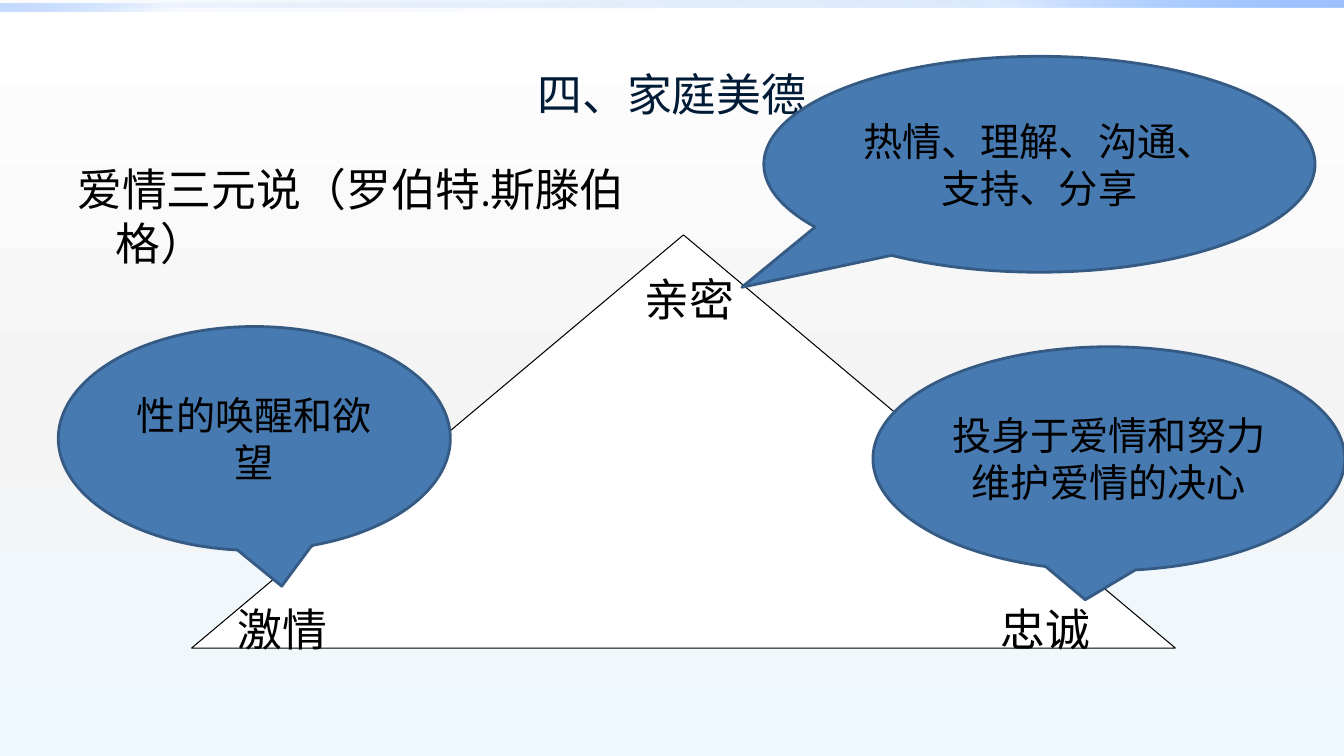
from dataclasses import dataclass

from lxml import etree
from pptx import Presentation
from pptx.dml.color import RGBColor
from pptx.enum.shapes import MSO_SHAPE
from pptx.enum.text import MSO_ANCHOR, MSO_AUTO_SIZE, PP_ALIGN
from pptx.oxml.ns import qn
from pptx.util import Cm, Pt

RECT = MSO_SHAPE.RECTANGLE
TRIANGLE = MSO_SHAPE.ISOSCELES_TRIANGLE
CALLOUT = MSO_SHAPE.OVAL_CALLOUT
TOP, MIDDLE = MSO_ANCHOR.TOP, MSO_ANCHOR.MIDDLE
LEFT, CENTER = PP_ALIGN.LEFT, PP_ALIGN.CENTER
GROW = MSO_AUTO_SIZE.SHAPE_TO_FIT_TEXT

BLACK = RGBColor(0x00, 0x00, 0x00)
WHITE = RGBColor(0xFF, 0xFF, 0xFF)
NAVY = RGBColor(0x00, 0x1B, 0x36)
CALLOUT_FILL = RGBColor(0x47, 0x7A, 0xB1)
CALLOUT_LINE = RGBColor(0x35, 0x5A, 0x83)
GREY = RGBColor(0xF4, 0xF4, 0xF4)
ICE = RGBColor(0xEE, 0xF9, 0xFF)
DEEP_BLUE = RGBColor(0x00, 0x58, 0xB7)
MID_BLUE = RGBColor(0x4F, 0x95, 0xFF)
PALE_BLUE = RGBColor(0x9E, 0xC2, 0xFF)

Box = tuple[float, float, float, float]


@dataclass
class Stop:
    position: int
    color: RGBColor
    opacity: int = 100


@dataclass
class Bar:
    box: Box
    angle: int
    stops: list[Stop]


@dataclass
class Text:
    text: str
    box: Box
    font: str = "Times New Roman"
    color: RGBColor = BLACK
    align: PP_ALIGN = LEFT
    anchor: MSO_ANCHOR = TOP
    hanging: float = 0
    grow: bool = False


@dataclass
class Callout:
    text: str
    box: Box
    tip: tuple[float, float]


BACKGROUND = [Stop(0, WHITE), Stop(55, GREY), Stop(100, ICE)]
BARS = [
    Bar((0, 0, 33.87, 0.2), 315,
        [Stop(0, DEEP_BLUE, 0), Stop(75, MID_BLUE, 20), Stop(100, PALE_BLUE)]),
    Bar((0, 0.1, 16.93, 0.2), 135,
        [Stop(0, DEEP_BLUE, 0), Stop(75, MID_BLUE, 5), Stop(100, PALE_BLUE, 60)]),
]
HEADINGS = [
    Text("四、家庭美德", (1.7, 0.76, 30.48, 3.18), "Arial", NAVY, CENTER, MIDDLE),
    Text("爱情三元说（罗伯特.斯滕伯格）", (1.7, 3.96, 14.66, 2.95), "Cambria",
         hanging=0.97),
]
TRIANGLE_BOX = (4.83, 5.92, 24.79, 10.41)
CORNERS = [
    Text("亲密", (16, 6.73, 3.53, 1.63), grow=True),
    Text("忠诚", (24.97, 15.04, 4.67, 1.63), grow=True),
    Text("激情", (5.74, 15.04, 5.87, 1.63), grow=True),
]
CALLOUTS = [
    Callout("热情、理解、沟通、支持、分享", (19.25, 1.42, 13.89, 5.44), (-0.54, 0.57)),
    Callout("性的唤醒和欲望", (1.47, 8.23, 9.88, 5.64), (0.07, 0.66)),
    Callout("投身于爱情和努力维护爱情的决心", (22, 8.74, 11.89, 5.64), (-0.05, 0.63)),
]


def set_gradient(fill, element, angle: int, stops: list[Stop]) -> None:
    fill.gradient()
    grad = next(element.iter(qn("a:gradFill")))
    for child in list(grad):
        grad.remove(child)
    gs_list = etree.SubElement(grad, qn("a:gsLst"))
    for stop in stops:
        gs = etree.SubElement(gs_list, qn("a:gs"), pos=str(stop.position * 1000))
        color = etree.SubElement(gs, qn("a:srgbClr"), val=str(stop.color))
        if stop.opacity < 100:
            etree.SubElement(color, qn("a:alpha"), val=str(stop.opacity * 1000))
    etree.SubElement(grad, qn("a:lin"), ang=str(angle * 60000), scaled="0")


def add_shape(s, kind: MSO_SHAPE, box: Box):
    sp = s.shapes.add_shape(kind, *map(Cm, box))
    sp.shadow.inherit = False
    return sp


def paint(sp, fill: RGBColor, line: RGBColor, width: float) -> None:
    sp.fill.solid()
    sp.fill.fore_color.rgb = fill
    sp.line.color.rgb = line
    sp.line.width = Pt(width)


def write(tf, text: str, font: str, size: int, color: RGBColor,
          align: PP_ALIGN, anchor: MSO_ANCHOR):
    tf.word_wrap = True
    tf.vertical_anchor = anchor
    tf.text = text
    p = tf.paragraphs[0]
    p.alignment = align
    r = p.runs[0]
    r.font.name = font
    r.font.size = Pt(size)
    r.font.color.rgb = color
    return p


def add_bar(s, bar: Bar) -> None:
    sp = add_shape(s, RECT, bar.box)
    set_gradient(sp.fill, sp._element, bar.angle, bar.stops)
    sp.line.fill.background()


def add_text(s, item: Text) -> None:
    tf = s.shapes.add_textbox(*map(Cm, item.box)).text_frame
    p = write(tf, item.text, item.font, 32, item.color, item.align, item.anchor)
    if item.grow:
        tf.auto_size = GROW
    if item.hanging:
        pPr = p._p.get_or_add_pPr()
        pPr.set("marL", str(Cm(item.hanging)))
        pPr.set("indent", str(-Cm(item.hanging)))


def add_callout(s, item: Callout) -> None:
    sp = add_shape(s, CALLOUT, item.box)
    sp.adjustments[0], sp.adjustments[1] = item.tip
    paint(sp, CALLOUT_FILL, CALLOUT_LINE, 2)
    write(sp.text_frame, item.text, "Cambria", 28, BLACK, CENTER, MIDDLE)


def main() -> None:
    prs = Presentation()
    prs.slide_width, prs.slide_height = Cm(33.87), Cm(19.05)
    s = prs.slides.add_slide(prs.slide_layouts[6])

    # Background and top bars
    set_gradient(s.background.fill, s._element, 90, BACKGROUND)
    for bar in BARS:
        add_bar(s, bar)

    # Title and subtitle
    for heading in HEADINGS:
        add_text(s, heading)

    # Triangle with its corner labels
    paint(add_shape(s, TRIANGLE, TRIANGLE_BOX), WHITE, BLACK, 0.75)
    for corner in CORNERS:
        add_text(s, corner)

    # Callouts explaining each corner
    for callout in CALLOUTS:
        add_callout(s, callout)

    prs.save("out.pptx")


if __name__ == "__main__":
    main()
